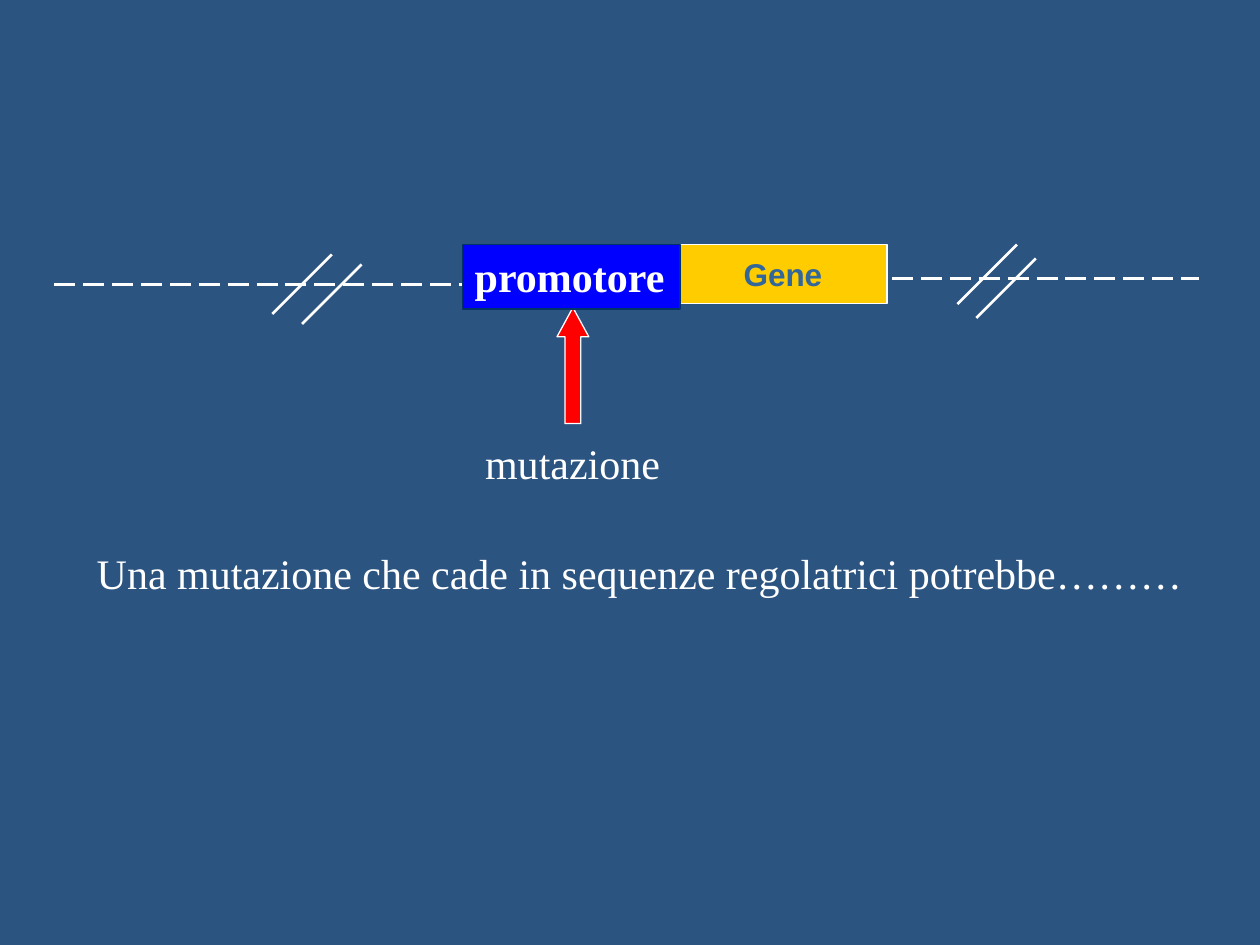
from dataclasses import dataclass

from lxml import etree
from pptx import Presentation
from pptx.dml.color import RGBColor
from pptx.enum import dml, shapes, text
from pptx.oxml import ns
from pptx.util import Cm, Pt


@dataclass(frozen=True)
class Theme:
    """Colours, fonts and sizes of the slide."""
    background: str = "2B5481"
    light: str = "FFFFFF"
    promoter: str = "0000FF"
    promoter_line: str = "003366"
    gene: str = "FFCC00"
    gene_text: str = "336699"
    mutation: str = "FF0000"
    serif: str = "Times New Roman"
    sans: str = "Arial"
    body: float = 24
    label: float = 18
    thin: float = 0.75
    strand: float = 1.5


THEME = Theme()


def rgb(code):
    """Turn a hex code into a colour."""
    return RGBColor.from_string(code)


def write(sp, words, font=THEME.serif, size=THEME.body, color=THEME.light,
          bold=False, align=text.PP_ALIGN.LEFT, anchor=text.MSO_ANCHOR.TOP, wrap=False):
    """Set and format the single paragraph of a shape."""
    tf = sp.text_frame
    tf.text = words
    tf.word_wrap = wrap
    tf.vertical_anchor = anchor
    p = tf.paragraphs[0]
    p.alignment = align
    r = p.runs[0]
    r.font.name, r.font.size, r.font.bold = font, Pt(size), bold
    r.font.color.rgb = rgb(color)


def add_block(s, kind, x, y, w, h, fill, line):
    """Add a filled, thinly outlined shape, measured in centimetres."""
    sp = s.shapes.add_shape(kind, Cm(x), Cm(y), Cm(w), Cm(h))
    sp.shadow.inherit = False
    sp.fill.solid()
    sp.fill.fore_color.rgb = rgb(fill)
    sp.line.color.rgb = rgb(line)
    sp.line.width = Pt(THEME.thin)
    return sp


def add_line(s, x1, y1, x2, y2, dash=None):
    """Add a light straight line, measured in centimetres."""
    line = s.shapes.add_connector(
        shapes.MSO_CONNECTOR.STRAIGHT, Cm(x1), Cm(y1), Cm(x2), Cm(y2))
    line.line.color.rgb = rgb(THEME.light)
    line.line.width = Pt(THEME.strand)
    if dash:
        line.line.dash_style = dash
    etree.SubElement(line._element.spPr, ns.qn("a:effectLst"))


def add_break(s, x, y, dx, dy, size=1.2):
    """Draw the two slanted strokes that interrupt the strand."""
    for i in range(2):
        left, top = x + i * dx, y + i * dy
        add_line(s, left + size, top, left, top + size)


def add_strand(s, x, y, w):
    """Draw the DNA strand with its breaks, gene and promoter."""
    dash = dml.MSO_LINE.LONG_DASH
    gene_x, gene_w, promoter_w = x + 12.6, 4.19, 4.39
    add_line(s, gene_x + gene_w + 0.1, y + 0.68, x + w, y + 0.68, dash)
    add_line(s, x, y + 0.81, gene_x, y + 0.81, dash)
    gene = add_block(s, shapes.MSO_SHAPE.RECTANGLE, gene_x, y, gene_w, 1.19,
                     THEME.gene, THEME.light)
    write(gene, "Gene", THEME.sans, THEME.label, THEME.gene_text, True,
          text.PP_ALIGN.CENTER, text.MSO_ANCHOR.MIDDLE)
    add_break(s, x + 18.21, y, 0.38, 0.28)
    add_break(s, x + 4.4, y + 0.2, 0.6, 0.2)
    promoter = add_block(s, shapes.MSO_SHAPE.RECTANGLE, gene_x - promoter_w + 0.02, y,
                         promoter_w, 1.3, THEME.promoter, THEME.promoter_line)
    write(promoter, "promotore", bold=True)


def add_mutation(s, x, y, w):
    """Draw the arrow pointing at the promoter and its label."""
    arrow_w = 0.64
    arrow = add_block(s, shapes.MSO_SHAPE.UP_ARROW, x + (w - arrow_w) / 2, y, arrow_w, 2.34,
                      THEME.mutation, THEME.light)
    arrow.adjustments[1] = 0.92
    label = s.shapes.add_textbox(Cm(x), Cm(y + 2.49), Cm(w), Cm(1.27))
    write(label, "mutazione")


def add_sentence(s, x, y, w, h):
    """Write the closing sentence."""
    box = s.shapes.add_textbox(Cm(x), Cm(y), Cm(w), Cm(h))
    write(box, "Una mutazione che cade in sequenze regolatrici potrebbe………",
          align=text.PP_ALIGN.JUSTIFY, wrap=True)


def main():
    """Build and save the slide."""
    prs = Presentation()
    prs.slide_width, prs.slide_height = Cm(25.4), Cm(19.05)
    s = prs.slides.add_slide(prs.slide_layouts[6])
    s.background.fill.solid()
    s.background.fill.fore_color.rgb = rgb(THEME.background)
    add_mutation(s, 9.53, 6.2, 4.04)
    add_sentence(s, 1.7, 10.92, 22.61, 1.27)
    add_strand(s, 1.09, 4.93, 23.09)
    prs.save("out.pptx")


if __name__ == "__main__":
    main()
